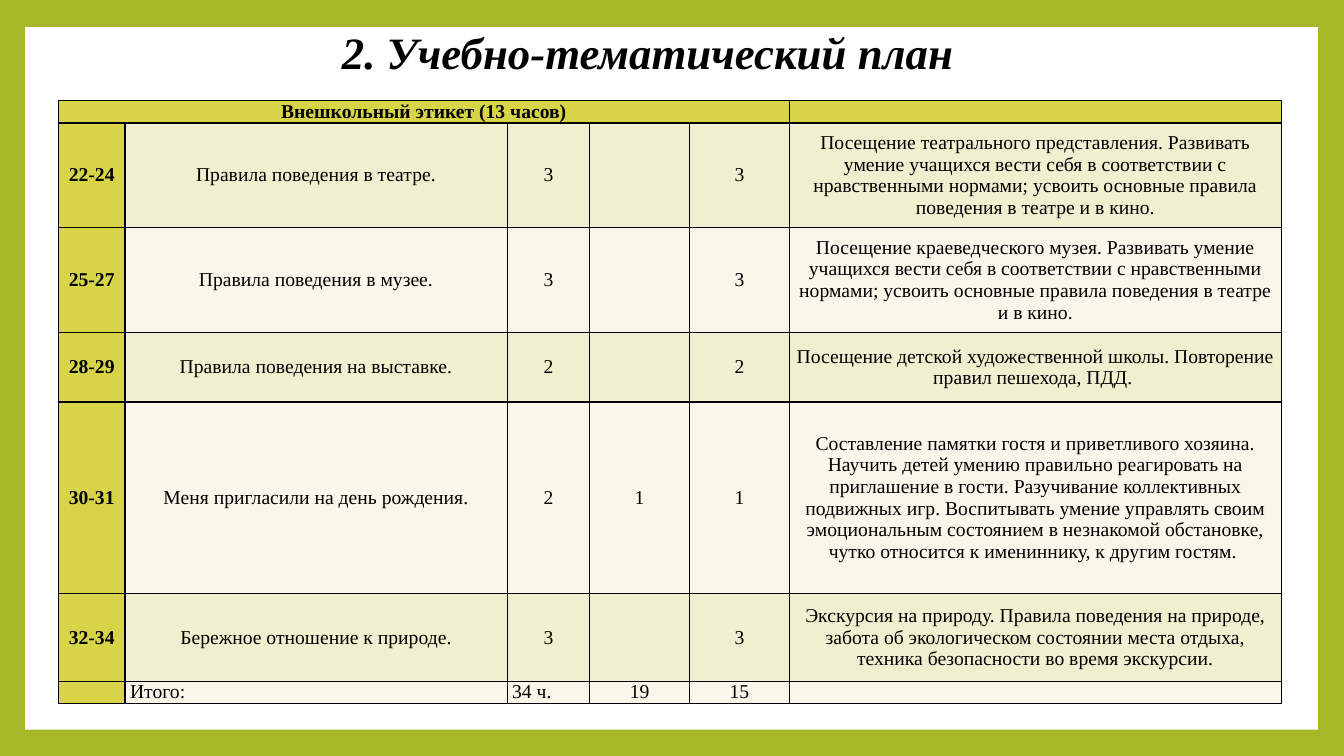
from lxml import etree
from pptx import Presentation
from pptx.dml.color import RGBColor
from pptx.enum import shapes, text
from pptx.oxml import ns
from pptx.util import Inches, Pt

TITLE = "2. Учебно-тематический план"
FONT = "Times New Roman"
GREEN, HEAD, DARK, LIGHT = "A6B727", "D7D447", "F0EFCF", "F8F7E9"
COLS = [0.66, 3.79, 0.82, 0.99, 0.99, 4.88]
ROWS = [0.22, 1.04, 1.04, 0.69, 1.9, 0.87, 0.22]
PLAN = [
    ("Внешкольный этикет (13 часов)", "", "", "", "", ""),
    ("22-24", "Правила поведения в театре.", "3", "", "3",
     "Посещение театрального представления. Развивать умение учащихся "
     "вести себя в соответствии с нравственными нормами; усвоить основные "
     "правила поведения в театре и в кино."),
    ("25-27", "Правила поведения в музее.", "3", "", "3",
     "Посещение краеведческого музея. Развивать умение учащихся "
     "вести себя в соответствии с нравственными нормами; усвоить основные "
     "правила поведения в театре и в кино."),
    ("28-29", "Правила поведения на выставке.", "2", "", "2",
     "Посещение детской художественной школы. Повторение правил "
     "пешехода, ПДД. "),
    ("30-31", "Меня пригласили на день рождения.", "2", "1", "1",
     "Составление памятки гостя и приветливого хозяина. Научить детей "
     "умению правильно реагировать на приглашение в гости. Разучивание "
     "коллективных подвижных игр. Воспитывать умение управлять своим "
     "эмоциональным состоянием в незнакомой обстановке, чутко относится "
     "к имениннику, к другим гостям. "),
    ("32-34", "Бережное отношение к природе.", "3", "", "3",
     "Экскурсия на природу. Правила поведения на природе, забота об "
     "экологическом состоянии места отдыха, техника безопасности во время "
     "экскурсии."),
    ("", "Итого:", "34 ч.", "19", "15", ""),
]


def paint(fill, color):
    fill.solid()
    fill.fore_color.rgb = RGBColor.from_string(color)


def style(para, size, bold, italic=False):
    font = para.font
    font.name, font.size = FONT, Pt(size)
    font.bold, font.italic = bold, italic
    paint(font.fill, "000000")


def border(cell):
    props = cell._tc.get_or_add_tcPr()
    for i, side in enumerate(("lnL", "lnR", "lnT", "lnB")):
        line = etree.Element(ns.qn("a:" + side), w=str(Pt(1)))
        fill = etree.SubElement(line, ns.qn("a:solidFill"))
        etree.SubElement(fill, ns.qn("a:srgbClr"), val="000000")
        props.insert(i, line)


def fill_cell(cell, row, col):
    words = PLAN[row][col]
    head = row == 0 or col == 0
    paint(cell.fill, HEAD if head else DARK if row % 2 else LIGHT)
    border(cell)
    cell.margin_left = cell.margin_right = Inches(0.05)
    cell.margin_top = cell.margin_bottom = 0
    cell.vertical_anchor = text.MSO_ANCHOR.MIDDLE
    para = cell.text_frame.paragraphs[0]
    left = row == len(PLAN) - 1 and col in (1, 2)
    para.alignment = text.PP_ALIGN.LEFT if left else text.PP_ALIGN.CENTER
    style(para, 14, head)
    if words:
        para.add_run().text = words
    else:
        etree.SubElement(para._p, ns.qn("a:endParaRPr"), sz="1400")


def main():
    deck = Presentation()
    deck.slide_width, deck.slide_height = Inches(13.33), Inches(7.5)
    slide = deck.slides.add_slide(deck.slide_layouts[5])
    paint(slide.background.fill, GREEN)

    sheet = slide.shapes.add_shape(
        shapes.MSO_SHAPE.RECTANGLE,
        Inches(0.25), Inches(0.27), Inches(12.82), Inches(6.97))
    sheet.shadow.inherit = False
    paint(sheet.fill, "FFFFFF")
    sheet.line.fill.background()

    title = slide.shapes.title
    slide.shapes._spTree.append(title._element)
    title.left, title.top = Inches(2.47), Inches(0.25)
    title.width, title.height = Inches(7.91), Inches(0.59)
    frame = title.text_frame
    frame.text = TITLE
    frame.vertical_anchor = text.MSO_ANCHOR.MIDDLE
    para = frame.paragraphs[0]
    para.alignment, para.line_spacing = text.PP_ALIGN.CENTER, 0.9
    style(para, 32, True, True)

    table = slide.shapes.add_table(
        len(ROWS), len(COLS), Inches(0.58), Inches(1),
        Inches(sum(COLS)), Inches(sum(ROWS))).table
    for col, width in zip(table.columns, COLS):
        col.width = Inches(width)
    for row, height in zip(table.rows, ROWS):
        row.height = Inches(height)
    table.first_row = table.horz_banding = False
    for row in range(len(ROWS)):
        for col in range(len(COLS)):
            fill_cell(table.cell(row, col), row, col)
    table.cell(0, 0).merge(table.cell(0, 4))
    deck.save("out.pptx")


if __name__ == "__main__":
    main()
